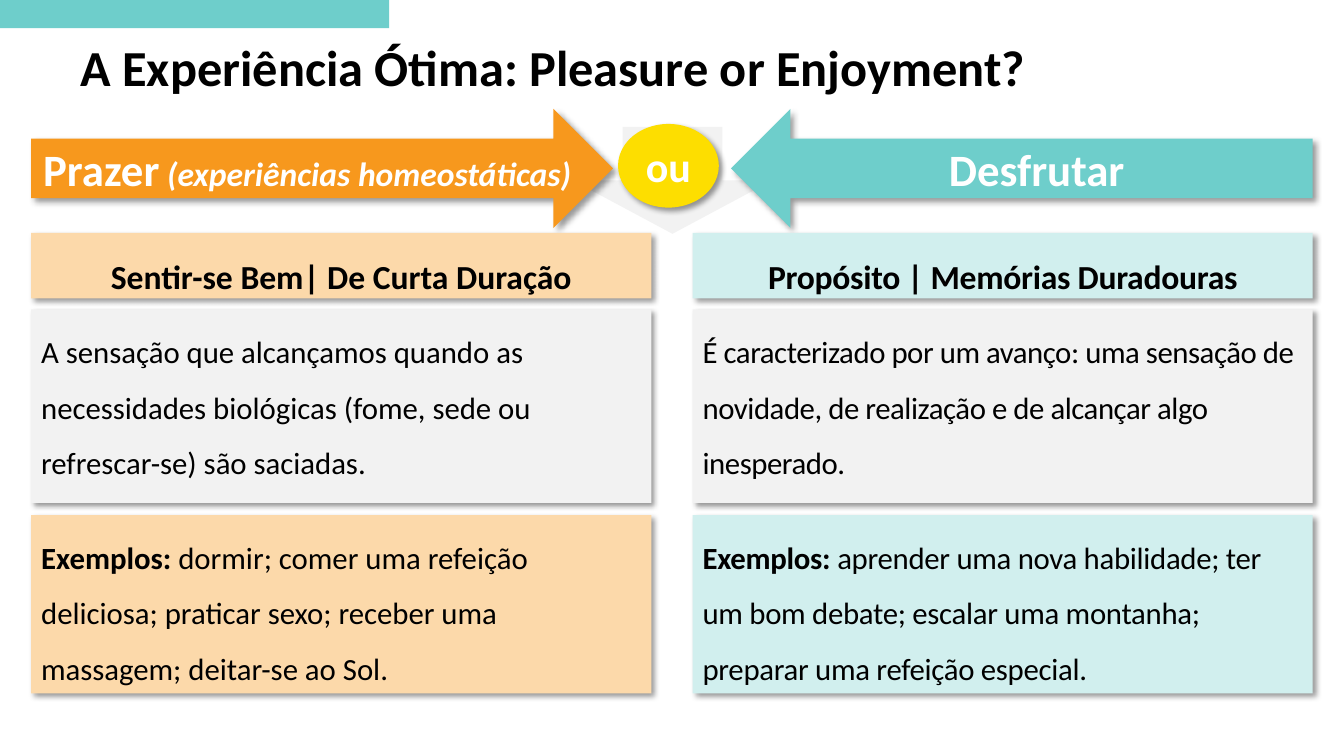
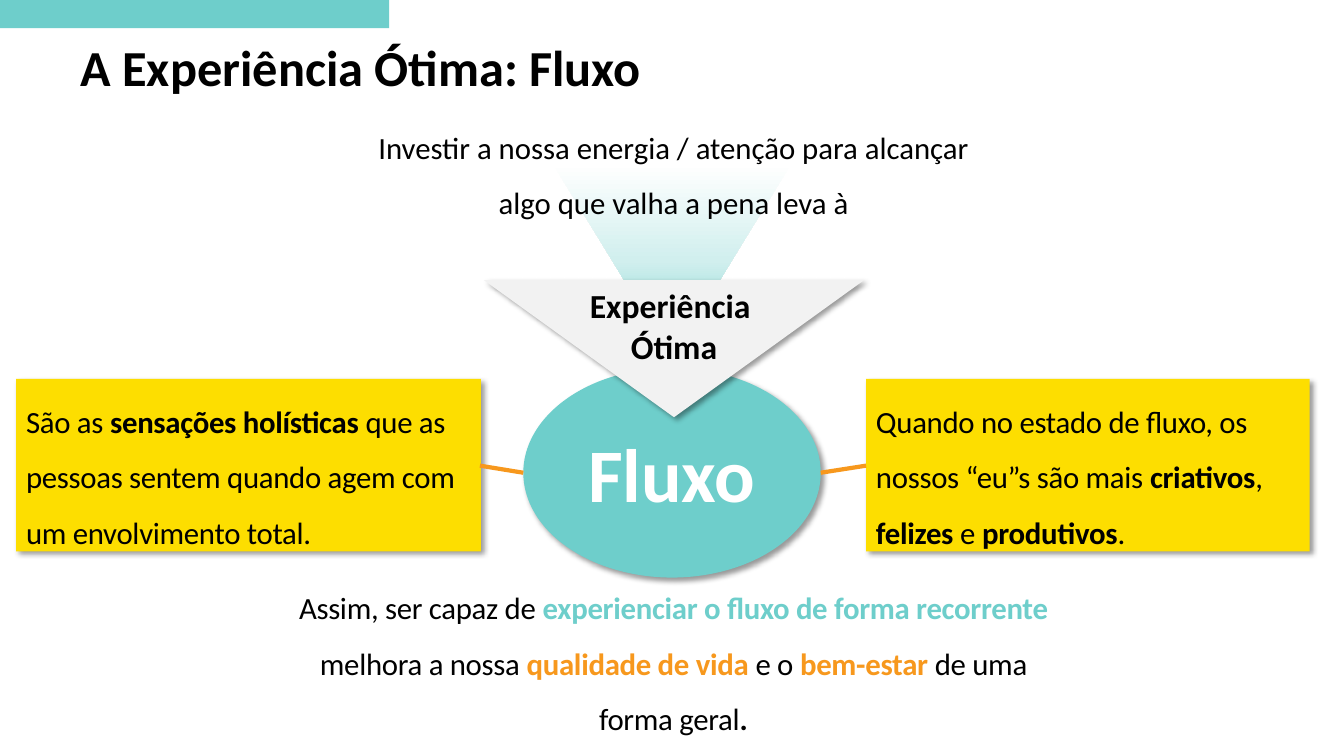
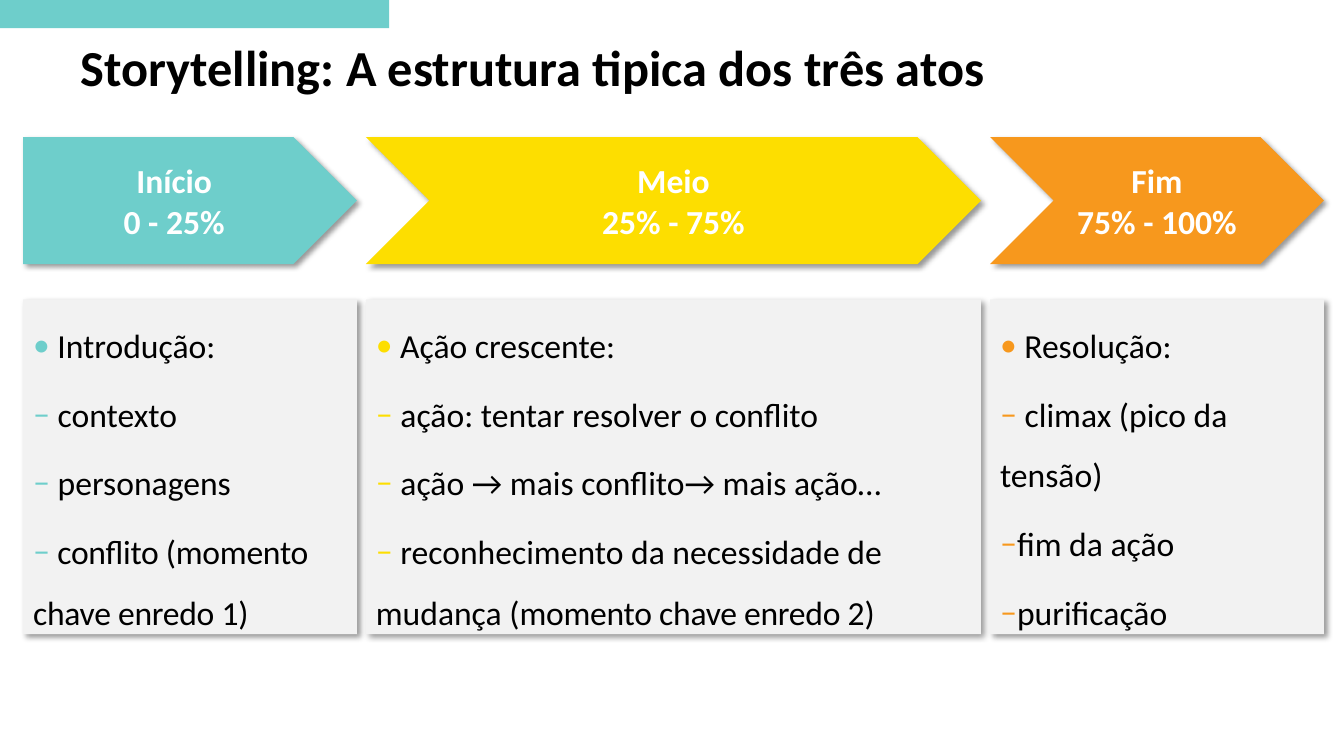
from dataclasses import dataclass
from typing import Optional

from lxml.etree import SubElement
from pptx import Presentation
from pptx.dml.color import RGBColor
from pptx.enum.shapes import MSO_CONNECTOR as Connector, MSO_SHAPE as Shape
from pptx.enum.text import MSO_ANCHOR as Anchor, PP_ALIGN as Align
from pptx.oxml.ns import qn
from pptx.util import Inches, Pt

TEAL = RGBColor(0x6E, 0xCE, 0xCB)
PALE_TEAL = RGBColor(0xD1, 0xEF, 0xEE)
ORANGE = RGBColor(0xF7, 0x98, 0x1D)
PALE_ORANGE = RGBColor(0xFC, 0xD9, 0xAA)
YELLOW = RGBColor(0xFD, 0xDE, 0x00)
GREY = RGBColor(0xF2, 0xF2, 0xF2)
WHITE = RGBColor(0xFF, 0xFF, 0xFF)
BLACK = RGBColor(0x00, 0x00, 0x00)
FONT = "Calibri"


@dataclass
class Span:
    """A run of text with the settings that differ from its box."""
    text: str
    bold: bool = False
    italic: bool = False
    color: Optional[RGBColor] = None
    size: Optional[int] = None
    tracking: int = 0


def bold(text, **settings):
    """Return a bold span."""
    return Span(text, bold=True, **settings)


def tight(*spans):
    """Narrow the letter spacing of the spans."""
    for span in spans:
        span.tracking = -20
    return list(spans)


class Deck:
    """Holds the presentation, its style and the current slide."""

    def __init__(self):
        """Start an empty widescreen presentation."""
        self.deck = Presentation()
        self.deck.slide_width = Inches(13.33)
        self.deck.slide_height = Inches(7.5)
        self.page = None

    def new_page(self, title):
        """Add a slide with the corner band and its title."""
        self.page = self.deck.slides.add_slide(self.deck.slide_layouts[6])
        self.shape(Shape.RECTANGLE, (0, 0, 3.86, 0.28), TEAL, shadow=False)
        self.text((0.7, 0.38, 12.22, 0.76), [[bold(title)]], 36,
                  align=Align.LEFT, leading=0.9)

    def shape(self, kind, place, fill=None, shadow=True):
        """Add a preset shape without outline."""
        box = self.page.shapes.add_shape(kind, *map(Inches, place))
        if fill is not None:
            box.fill.solid()
            box.fill.fore_color.rgb = fill
        box.line.fill.background()
        box.shadow.inherit = False
        if shadow:
            effects = box._element.spPr.find(qn("a:effectLst"))
            outer = SubElement(effects, qn("a:outerShdw"), blurRad=str(Pt(4)),
                               dist=str(Pt(3)), dir="2700000", algn="tl", rotWithShape="0")
            tint = SubElement(outer, qn("a:srgbClr"), val=str(BLACK))
            SubElement(tint, qn("a:alpha"), val="40000")
        return box

    def beam(self, place, colors):
        """Add an upside-down triangle that fades between evenly spaced colours."""
        box = self.shape(Shape.ISOSCELES_TRIANGLE, place, shadow=False)
        box.rotation = 180
        box.fill.gradient()
        box.fill.gradient_angle = 90
        stops = next(box._element.spPr.iter(qn("a:gsLst")))
        for stop in list(stops):
            stops.remove(stop)
        for index, color in enumerate(colors):
            position = 100000 * index // (len(colors) - 1)
            stop = SubElement(stops, qn("a:gs"), pos=str(position))
            SubElement(stop, qn("a:srgbClr"), val=str(color))

    def text(self, place, paragraphs, size, **style):
        """Add a wrapping text box."""
        box = self.page.shapes.add_textbox(*map(Inches, place))
        self.add_text(box, paragraphs, size, **style)

    def label(self, kind, place, fill, paragraphs, size, color=WHITE, **style):
        """Add a shape with vertically centred text."""
        self.add_text(self.shape(kind, place, fill), paragraphs, size, color,
                      anchor=Anchor.MIDDLE, **style)

    def panel(self, place, fill, paragraphs, size=22, **style):
        """Add a rectangle with widely spaced body text."""
        self.add_text(self.shape(Shape.RECTANGLE, place, fill), paragraphs, size,
                      align=Align.LEFT, leading=1.5, **style)

    def add_text(self, box, paragraphs, size, color=BLACK, align=Align.CENTER,
                 anchor=Anchor.TOP, leading=1.0, after=0, wrap=True, bullet_color=None):
        """Fill a box with paragraphs, each a list of spans."""
        frame = box.text_frame
        frame.word_wrap = wrap
        frame.vertical_anchor = anchor
        for index, spans in enumerate(paragraphs):
            para = frame.add_paragraph() if index else frame.paragraphs[0]
            if bullet_color is not None:
                self.bullet(para, "‒" if index else "•", bullet_color)
            para.alignment = align
            para.line_spacing = leading
            para.space_after = Pt(after)
            for span in spans:
                run = para.add_run()
                run.text = span.text
                font = run.font
                font.name = FONT
                font.size = Pt(span.size or size)
                font.bold = span.bold
                font.italic = span.italic
                font.color.rgb = color if span.color is None else span.color
                if span.tracking:
                    run._r.get_or_add_rPr().set("spc", str(span.tracking))

    def bullet(self, para, mark, color):
        """Give a paragraph a coloured bullet without indent."""
        settings = para._p.get_or_add_pPr()
        settings.set("marL", "0")
        settings.set("indent", "0")
        SubElement(SubElement(settings, qn("a:buClr")), qn("a:srgbClr"), val=str(color))
        SubElement(settings, qn("a:buFont"), typeface=FONT)
        SubElement(settings, qn("a:buChar"), char=mark)

    def line(self, start, end, color, width):
        """Add a straight line without shadow."""
        line = self.page.shapes.add_connector(
            Connector.STRAIGHT, *map(Inches, start + end))
        line.line.color.rgb = color
        line.line.width = Pt(width)
        SubElement(line._element.spPr, qn("a:effectLst"))


def pleasure_page(deck):
    """Compare pleasure and enjoyment in two columns."""
    deck.new_page("A Experiência Ótima: Pleasure or Enjoyment?")
    deck.shape(Shape.DOWN_ARROW, (5.68, 1.26, 1.98, 1.06), GREY, shadow=False)
    deck.label(Shape.RIGHT_ARROW, (0.31, 1.08, 5.77, 1.18), ORANGE,
               [[bold("Prazer"), bold(" ", size=24),
                 bold("(experiências homeostáticas)", size=24, italic=True)]], 32)
    deck.label(Shape.LEFT_ARROW, (7.25, 1.08, 5.77, 1.18), TEAL, [[bold("Desfrutar")]], 32)
    deck.label(Shape.OVAL, (6.13, 1.23, 1, 0.83), YELLOW, [[bold("ou")]], 30)
    columns = [
        (0.31, PALE_ORANGE,
         [bold("Sentir-se Bem| De Curta Duração")],
         [Span("A sensação que alcançamos quando as necessidades biológicas "
               "(fome, sede ou refrescar-se) são saciadas.")],
         [bold("Exemplos: "),
          Span("dormir; comer uma refeição deliciosa; praticar sexo; "
               "receber uma massagem; deitar-se ao Sol.")]),
        (6.87, PALE_TEAL,
         tight(bold("Propósito | Memórias Duradouras")),
         [Span("É caracterizado por um avanço: uma sensação de novidade, "
               "de realização e de alcançar algo inesperado.", tracking=-30)],
         tight(bold("Exemplos: "),
               Span("aprender uma nova habilidade; ter um bom debate; "
                    "escalar uma montanha; preparar uma refeição especial."))),
    ]
    for left, tint, heading, meaning, examples in columns:
        deck.panel((left, 3.07, 6.15, 1.92), GREY, [meaning])
        deck.label(Shape.RECTANGLE, (left, 2.31, 6.15, 0.65), tint, [heading], 24,
                   BLACK, leading=1.5)
        deck.panel((left, 5.11, 6.15, 1.77), tint, [examples])


def flow_page(deck):
    """Explain the state of flow."""
    deck.new_page("A Experiência Ótima: Fluxo")
    deck.beam((5.48, 1.62, 2.37, 1.93), (WHITE, PALE_TEAL, TEAL))
    deck.label(Shape.OVAL, (5.19, 3.65, 2.95, 2.08), TEAL, [[bold("Fluxo")]], 54)
    deck.panel((0.16, 3.76, 4.61, 1.71), YELLOW, [tight(
        Span("São as "), bold("sensações holísticas "),
        Span("que as pessoas sentem quando agem com um envolvimento total."))], after=6)
    deck.panel((8.59, 3.76, 4.4, 1.71), YELLOW, [tight(
        Span("Quando no estado de fluxo, os nossos “eu”s são mais "),
        bold("criativos"), Span(", "), bold("felizes "), Span("e "),
        bold("produtivos"), Span("."))], after=6)
    funnel = deck.shape(Shape.FLOWCHART_MERGE, (4.8, 2.78, 3.77, 1.36), GREY)
    deck.add_text(funnel, [[bold("Experiência ")], [bold("Ótima")]], 24, wrap=False)
    deck.text((3.52, 1.04, 6.32, 1.15), [[
        Span("Investir a nossa energia / atenção para alcançar "
             "algo que valha a pena leva à")]], 22, leading=1.5)
    deck.text((2.73, 5.61, 7.9, 1.71), [tight(
        Span("Assim, ser capaz de "),
        bold("experienciar o fluxo de forma recorrente ", color=TEAL),
        Span("melhora a nossa "), bold("qualidade de vida", color=ORANGE),
        Span(" e o "), bold("bem-estar ", color=ORANGE),
        Span("de uma forma geral"), bold("."))], 22, leading=1.5)
    deck.line((4.76, 4.62), (5.19, 4.69), ORANGE, 3)
    deck.line((8.14, 4.69), (8.59, 4.62), ORANGE, 3)


def acts_page(deck):
    """Show the three acts of a story."""
    deck.new_page("Storytelling: A estrutura tipica dos três atos")
    acts = [
        (Shape.PENTAGON, 3.31, TEAL, "Início", "0 - 25%",
         [[Span(" Introdução:")], [Span(" contexto")], [Span(" personagens")],
          tight(Span(" conflito (momento chave enredo 1)"))]),
        (Shape.CHEVRON, 6.1, YELLOW, "Meio", "25% - 75%",
         [[Span(" Ação crescente:")], [Span(" ação: tentar resolver o conflito")],
          [Span(" ação → mais conflito→ mais ação…")],
          [Span(" reconhecimento da necessidade de mudança ("),
           *tight(Span("momento chave enredo ")), Span("2)")]]),
        (Shape.CHEVRON, 3.31, ORANGE, "Fim", "75% - 100%",
         [[Span(" Resolução:")], [Span(" climax (pico da tensão)")],
          [Span("fim da ação")], [Span("purificação")]]),
    ]
    left, gap = 0.23, 0.09
    for kind, width, color, name, share, events in acts:
        deck.label(kind, (left, 1.36, width, 1.26), color, [[bold(name)], [bold(share)]], 24)
        deck.panel((left, 2.97, width, 3.32), GREY, events, 24, after=6, bullet_color=color)
        left += width + gap


def main():
    """Build the three slides."""
    deck = Deck()
    pleasure_page(deck)
    flow_page(deck)
    acts_page(deck)
    deck.deck.save("out.pptx")


if __name__ == "__main__":
    main()
